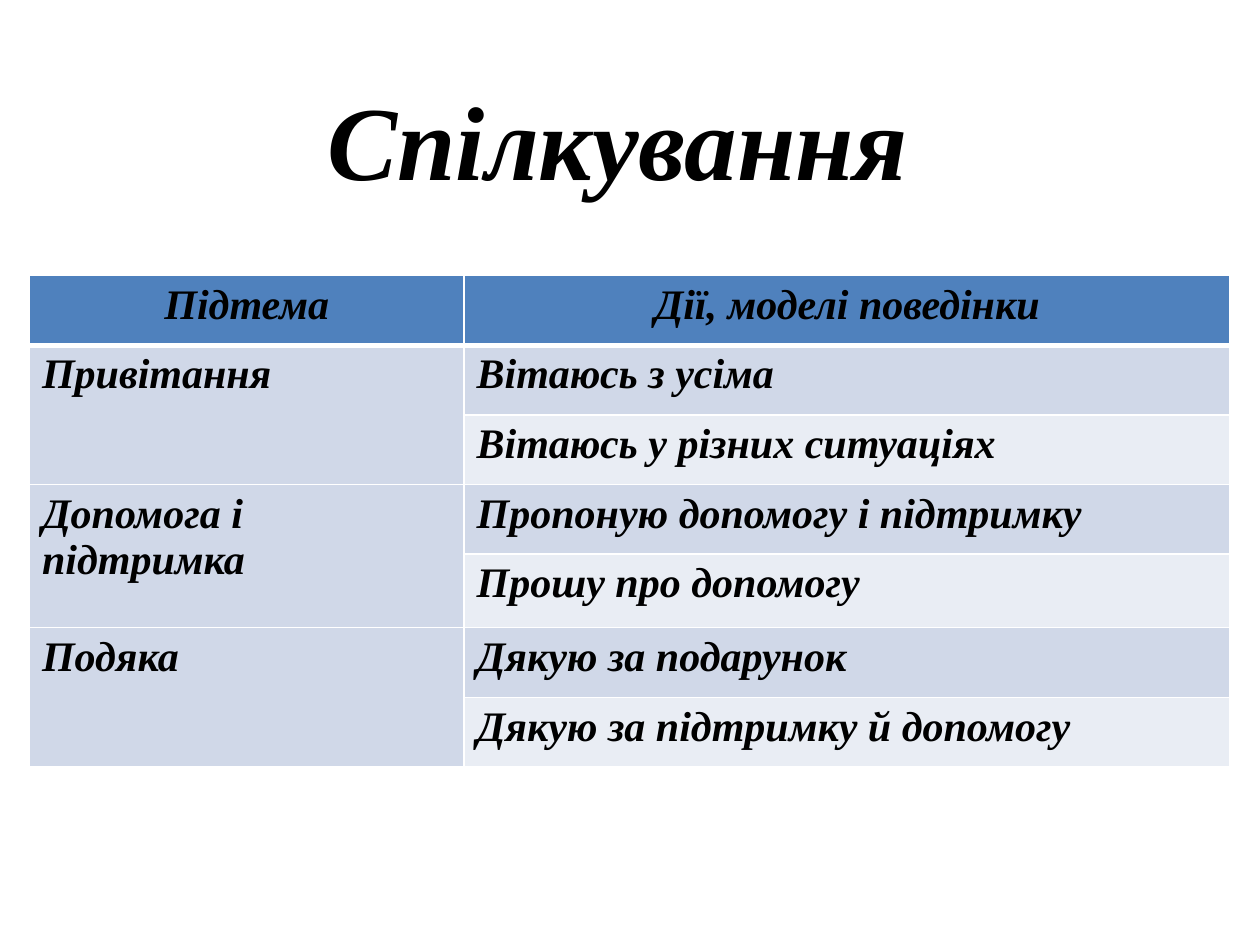
from lxml.etree import SubElement
from pptx import Presentation
from pptx.dml.color import RGBColor
from pptx.enum.text import MSO_ANCHOR, MSO_AUTO_SIZE, PP_ALIGN
from pptx.oxml.ns import qn
from pptx.util import Pt

HEADINGS = ("Підтема", "Дії, моделі поведінки")
TOPICS = {
    "Привітання": ("Вітаюсь з усіма", "Вітаюсь у різних ситуаціях"),
    "Допомога і підтримка": ("Пропоную допомогу і підтримку", "Прошу про допомогу"),
    "Подяка": ("Дякую за подарунок", "Дякую за підтримку й допомогу"),
}
COLUMN_WIDTHS = (248.4, 437.8)
ROW_HEIGHTS = (39.8, 39.8, 39.8, 39.8, 42, 39.8, 39.8)


def rgb(value):
    return RGBColor.from_string(value)


def write(frame, text, size=24, align=PP_ALIGN.LEFT, font="Times New Roman", color="000000"):
    paragraph = frame.paragraphs[0]
    paragraph.alignment = align
    run = paragraph.add_run()
    run.text = text
    run.font.name = font
    run.font.size = Pt(size)
    run.font.bold = run.font.italic = True
    run.font.color.rgb = rgb(color)


class TopicSlide:
    header_fill = "4F81BD"
    band_fills = ("D0D8E8", "E9EDF4")
    border_color = "FFFFFF"

    def __init__(self, presentation):
        self.slide = presentation.slides.add_slide(presentation.slide_layouts[5])

    def title(self, text, left, top, width, height):
        heading = self.slide.shapes.title
        heading.left, heading.top = Pt(left), Pt(top)
        heading.width, heading.height = Pt(width), Pt(height)
        frame = heading.text_frame
        frame.word_wrap = False
        frame.auto_size = MSO_AUTO_SIZE.NONE
        frame.vertical_anchor = MSO_ANCHOR.TOP
        write(frame, text, size=60)

    def border(self, cell, side, width):
        properties = cell._tc.get_or_add_tcPr()
        line = SubElement(properties, qn(f"a:ln{side}"), w=str(Pt(width)))
        fill = SubElement(line, qn("a:solidFill"))
        SubElement(fill, qn("a:srgbClr"), val=self.border_color)

    def cell(self, cell, fill, text="", bottom=1, **text_format):
        for side, width in zip("LRTB", (1, 1, 1, bottom)):
            self.border(cell, side, width)
        cell.fill.solid()
        cell.fill.fore_color.rgb = rgb(fill)
        if text:
            write(cell.text_frame, text, **text_format)

    def topic_table(self, left, top):
        table = self.slide.shapes.add_table(
            len(ROW_HEIGHTS), len(COLUMN_WIDTHS), Pt(left), Pt(top),
            Pt(sum(COLUMN_WIDTHS)), Pt(sum(ROW_HEIGHTS))).table
        for column, width in zip(table.columns, COLUMN_WIDTHS):
            column.width = Pt(width)
        for row, height in zip(table.rows, ROW_HEIGHTS):
            row.height = Pt(height)
        for column, heading in enumerate(HEADINGS):
            self.cell(table.cell(0, column), self.header_fill, heading,
                      bottom=3, align=PP_ALIGN.CENTER)
        row = 1
        for topic, actions in TOPICS.items():
            first_row = row
            for action, fill in zip(actions, self.band_fills):
                self.cell(table.cell(row, 0), self.band_fills[0],
                          topic if row == first_row else "")
                self.cell(table.cell(row, 1), fill, action)
                row += 1
            table.cell(first_row, 0).merge(table.cell(row - 1, 0))


def main():
    presentation = Presentation()
    presentation.slide_width, presentation.slide_height = Pt(720), Pt(540)
    communication = TopicSlide(presentation)
    communication.title("Спілкування", 180, 39.6, 348.5, 80)
    communication.topic_table(16.8, 157.5)
    presentation.save("out.pptx")


if __name__ == "__main__":
    main()
